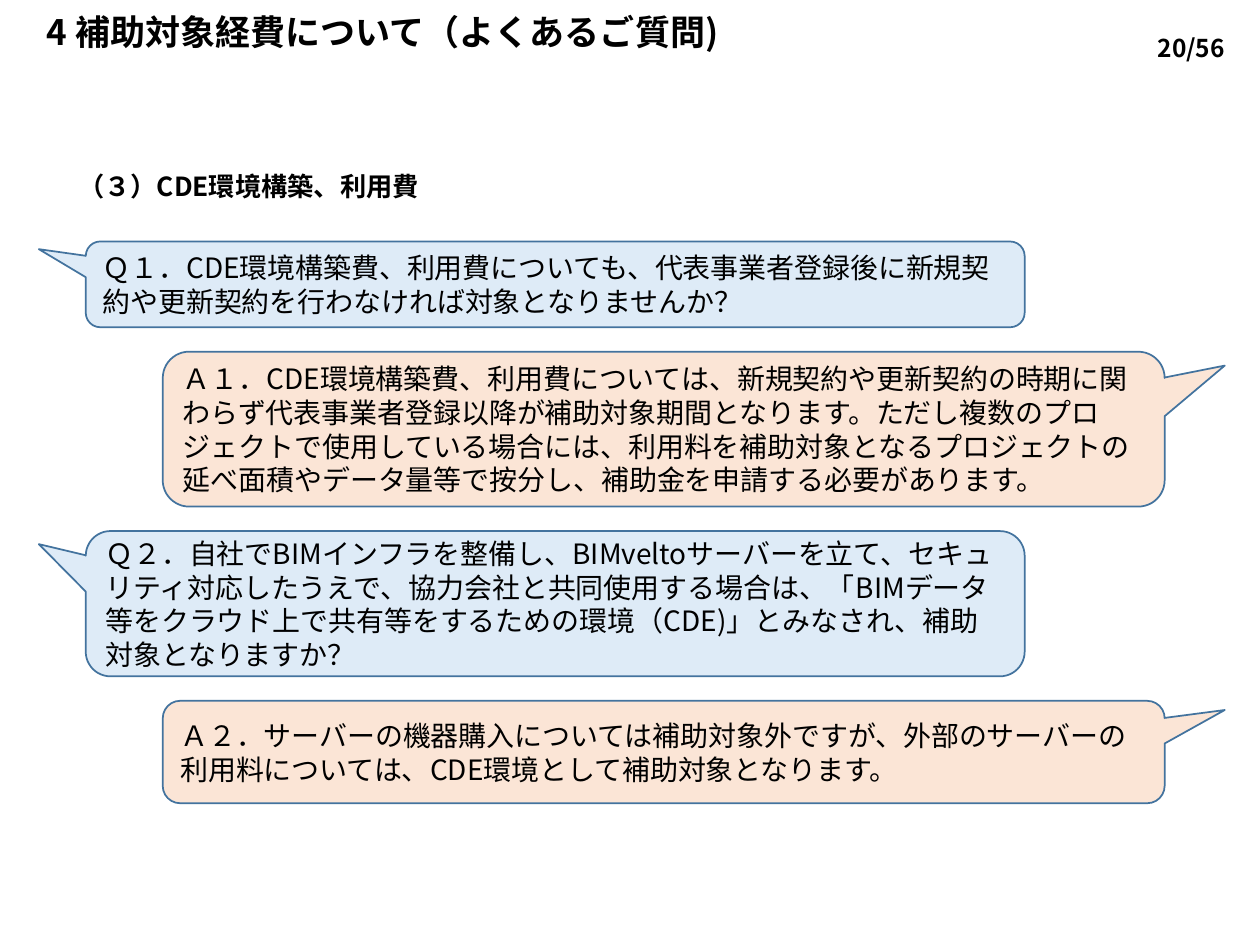
from lxml import etree
from pptx import Presentation
from pptx.dml.color import RGBColor
from pptx.enum import shapes, text
from pptx.oxml.ns import qn
from pptx.util import Pt

FONT = "Noto Sans CJK JP"
BLACK, OUTLINE = "000000", "43739E"

# Content
TITLE = "4 補助対象経費について（よくあるご質問)"
PAGE = "20/56"
SECTION = "（３）CDE環境構築、利用費"
# Speaker, bubble height, words
DIALOGUE = [
    ("Q", 49, "Ｑ１．CDE環境構築費、利用費についても、代表事業者登録後に新規契約や"
              "更新契約を行わなければ対象となりませんか？"),
    ("A", 88.5, "Ａ１．CDE環境構築費、利用費については、新規契約や更新契約の時期に"
                "関わらず代表事業者登録以降が補助対象期間となります。ただし複数の"
                "プロジェクトで使用している場合には、利用料を補助対象となるプロジェクトの"
                "延べ面積やデータ量等で按分し、補助金を申請する必要があります。"),
    ("Q", 83, "Ｑ２．自社でBIMインフラを整備し、BIMveltoサーバーを立て、セキュリティ対応"
              "したうえで、協力会社と共同使用する場合は、「BIMデータ等をクラウド上で"
              "共有等をするための環境（CDE)」とみなされ、補助対象となりますか？"),
    ("A", 58.5, "Ａ２．サーバーの機器購入については補助対象外ですが、外部のサーバーの"
                "利用料については、CDE環境として補助対象となります。"),
]
# Left, width, fill, pointer and corner adjustments
BUBBLES = {
    "Q": (49, 536.5, "DEEBF7", (-0.55, -0.41, 0.17)),
    "A": (93, 572.5, "FBE5D6", (0.56, -0.41, 0.17)),
}
FIRST_TOP, GAP = 138, 14


def color(hex_code):
    return RGBColor.from_string(hex_code)


def write(shape, words, size, bold=False, align=text.PP_ALIGN.LEFT,
          anchor=text.MSO_ANCHOR.MIDDLE):
    frame = shape.text_frame
    frame.word_wrap = True
    frame.vertical_anchor = anchor
    frame.text = words
    paragraph = frame.paragraphs[0]
    paragraph.alignment = align
    font = paragraph.runs[0].font
    font.name, font.size, font.bold = FONT, Pt(size), bold
    font.color.rgb = color(BLACK)
    # Japanese characters take the East Asian typeface
    east_asian = etree.SubElement(font._element, qn("a:ea"))
    east_asian.set("typeface", FONT)
    return paragraph


def add_text(slide, box, words, size, **style):
    label = slide.shapes.add_textbox(*map(Pt, box))
    return write(label, words, size, bold=True, **style)


def add_bubble(slide, speaker, top, height, words):
    left, width, fill, adjustments = BUBBLES[speaker]
    bubble = slide.shapes.add_shape(
        shapes.MSO_SHAPE.ROUNDED_RECTANGULAR_CALLOUT,
        Pt(left), Pt(top), Pt(width), Pt(height))
    for index, value in enumerate(adjustments):
        bubble.adjustments[index] = value
    bubble.shadow.inherit = False
    bubble.fill.solid()
    bubble.fill.fore_color.rgb = color(fill)
    bubble.line.color.rgb = color(OUTLINE)
    bubble.line.width = Pt(1)
    write(bubble, words, 16)


def main():
    deck = Presentation()
    deck.slide_width, deck.slide_height = Pt(720), Pt(540)
    slide = deck.slides.add_slide(deck.slide_layouts[6])

    # Heading and page number
    heading = add_text(slide, (19.5, 0, 584.5, 39), TITLE, 20)
    heading.line_spacing = 0.9
    page = add_text(slide, (641.5, 0, 78.5, 31), PAGE, 14,
                    align=text.PP_ALIGN.CENTER)
    page.line_spacing = Pt(40)

    # Questions and answers, stacked with equal gaps
    top = FIRST_TOP
    for speaker, height, words in DIALOGUE:
        add_bubble(slide, speaker, top, height, words)
        top += height + GAP

    # Section heading
    section = add_text(slide, (19.5, 93.5, 680.5, 392.5), SECTION, 15,
                       anchor=text.MSO_ANCHOR.TOP)
    section._p.get_or_add_pPr().set("marL", str(Pt(18)))

    deck.save("out.pptx")


if __name__ == "__main__":
    main()
